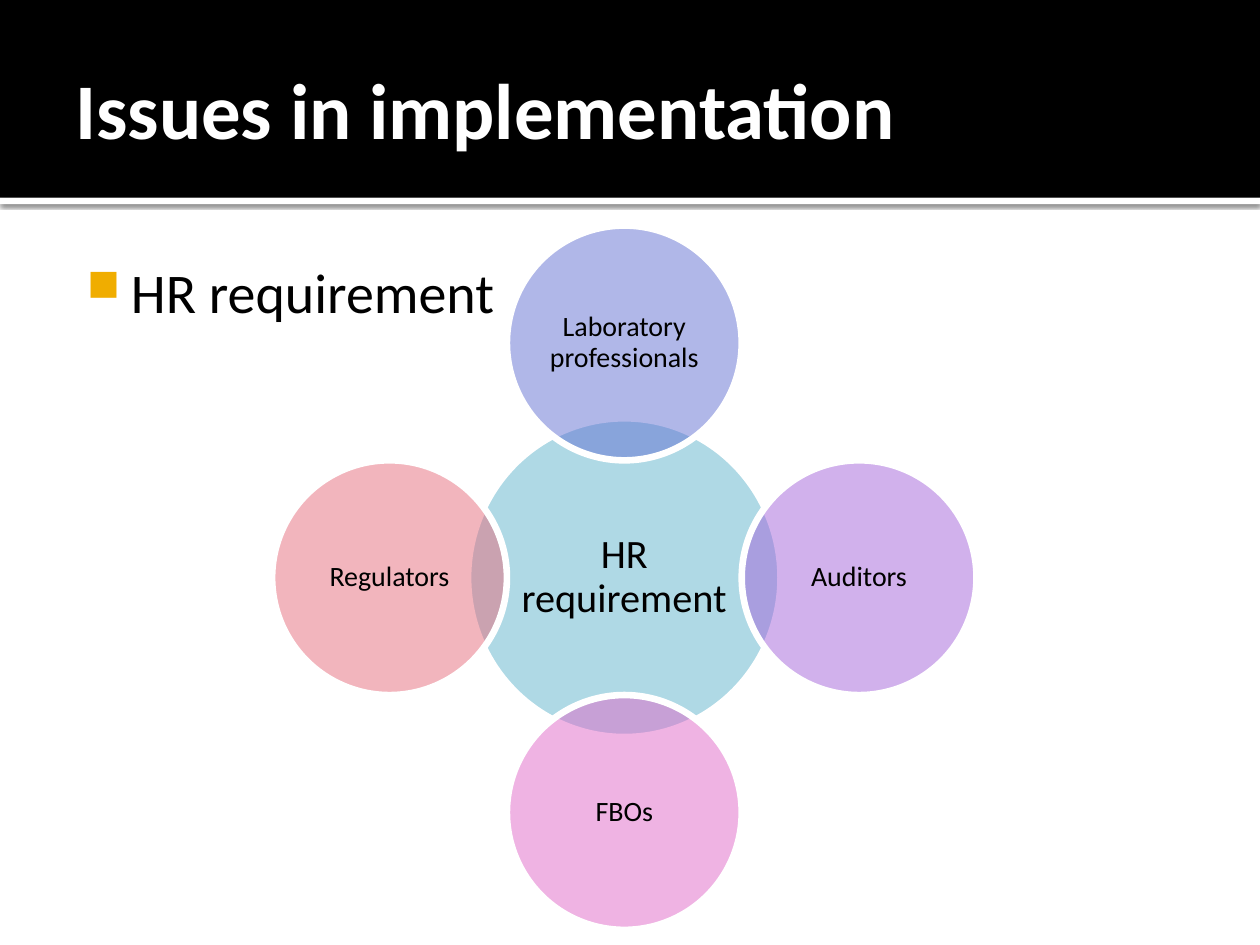
import math

import pptx
import pptx.dml.color
import pptx.enum.shapes
import pptx.enum.text
import pptx.oxml
import pptx.oxml.ns
import pptx.util
from pptx.dml.color import RGBColor
from pptx.util import Inches

BLACK = RGBColor(0x00, 0x00, 0x00)
WHITE = RGBColor(0xFF, 0xFF, 0xFF)
AMBER = RGBColor(0xF0, 0xAD, 0x00)
TEAL = RGBColor(0x60, 0xB5, 0xCC)
BLUE = RGBColor(0x62, 0x70, 0xD3)
PURPLE = RGBColor(0xA4, 0x65, 0xDA)
PINK = RGBColor(0xE0, 0x68, 0xC8)
RED = RGBColor(0xE6, 0x6C, 0x7D)

FONT = "Calibri"
SHAPES = pptx.enum.shapes.MSO_SHAPE
ANCHOR = pptx.enum.text.MSO_ANCHOR
ALIGN = pptx.enum.text.PP_ALIGN

# Satellite circles, clockwise from the top
SATELLITES = [
    ("Laboratory professionals", BLUE),
    ("Auditors", PURPLE),
    ("FBOs", PINK),
    ("Regulators", RED),
]


def add_xml(parent, xml):
    namespaces = pptx.oxml.ns.nsdecls("a")
    tag, rest = xml.split(" ", 1)
    parent.append(pptx.oxml.parse_xml(f"{tag} {namespaces} {rest}"))


def set_text(shape, text, size, color, anchor, margins, bold=False):
    frame = shape.text_frame
    frame.word_wrap = True
    frame.vertical_anchor = anchor
    (frame.margin_left, frame.margin_top,
     frame.margin_right, frame.margin_bottom) = map(Inches, margins)
    paragraph = frame.paragraphs[0]
    paragraph.text = text
    paragraph.font.name = FONT
    paragraph.font.size = pptx.util.Pt(size)
    paragraph.font.bold = bold
    paragraph.font.color.rgb = color
    return paragraph


def add_band(slide, left, top, width, height, color):
    band = slide.shapes.add_shape(
        SHAPES.RECTANGLE, Inches(left), Inches(top), Inches(width), Inches(height))
    band.shadow.inherit = False
    band.fill.solid()
    band.fill.fore_color.rgb = color
    band.line.fill.background()
    return band


def add_header(slide, left, top, width, height):
    # White rule with a soft shadow below the black band
    rule = add_band(slide, left, top + height, width, 0.05, WHITE)
    effects = rule._element.spPr.find(pptx.oxml.ns.qn("a:effectLst"))
    add_xml(effects, '<a:outerShdw blurRad="31750" dist="10160" dir="5400000" '
                     'algn="tl" rotWithShape="0"><a:srgbClr val="000000">'
                     '<a:alpha val="60000"/></a:srgbClr></a:outerShdw>')
    add_band(slide, left, top, width, height, BLACK)

    # Title
    title = slide.shapes.add_textbox(
        Inches(left + 0.5), Inches(top + 0.17), Inches(width - 1), Inches(1.37))
    set_text(title, "Issues in implementation", 45, WHITE, ANCHOR.MIDDLE,
             (0.1, 0.05, 0.05, 0.05), bold=True)


def add_body(slide, left, top, width, height):
    body = slide.shapes.add_textbox(
        Inches(left), Inches(top), Inches(width), Inches(height))
    paragraph = set_text(body, "HR requirement", 32, BLACK, ANCHOR.TOP,
                         (0.06, 0.1, 0.1, 0.05))
    paragraph.space_after = pptx.util.Pt(18)

    # Hanging square bullet, placed before the default run properties
    properties = paragraph._p.get_or_add_pPr()
    properties.set("marL", str(Inches(0.48)))
    properties.set("indent", str(Inches(-0.35)))
    defaults = properties.find(pptx.oxml.ns.qn("a:defRPr"))
    add_xml(properties, f'<a:buClr ><a:srgbClr val="{AMBER}"/></a:buClr>')
    add_xml(properties, '<a:buSzPct val="80000"/>')
    add_xml(properties, '<a:buChar char="■"/>')
    if defaults is not None:
        properties.append(defaults)


def add_circle(slide, center_x, center_y, width, height, text, size, color):
    circle = slide.shapes.add_shape(
        SHAPES.OVAL, Inches(center_x - width / 2), Inches(center_y - height / 2),
        Inches(width), Inches(height))
    circle.shadow.inherit = False
    circle.fill.solid()
    circle.fill.fore_color.rgb = color
    color_element = circle._element.spPr.find(".//" + pptx.oxml.ns.qn("a:srgbClr"))
    add_xml(color_element, '<a:alpha val="50000"/>')
    circle.line.color.rgb = WHITE
    circle.line.width = pptx.util.Pt(3.78)
    paragraph = set_text(circle, text, size, BLACK, ANCHOR.MIDDLE, (0.02,) * 4)
    paragraph.alignment = ALIGN.CENTER
    paragraph.line_spacing = 0.9


def add_radial_diagram(slide, left, top, side):
    center_x, center_y = left + side / 2, top + side / 2
    diameter = side / 3
    orbit = (side - diameter) / 2
    add_circle(slide, center_x, center_y, 2.48, 2.53, "HR requirement", 23, TEAL)
    for index, (text, color) in enumerate(SATELLITES):
        angle = 2 * math.pi * index / len(SATELLITES)
        add_circle(slide, center_x + orbit * math.sin(angle),
                   center_y - orbit * math.cos(angle),
                   diameter, diameter, text, 16, color)


def main():
    presentation = pptx.Presentation()
    presentation.slide_width = Inches(10)
    presentation.slide_height = Inches(7.5)
    slide = presentation.slides.add_slide(presentation.slide_layouts[6])
    add_header(slide, 0, 0, 10, 1.57)
    add_body(slide, 0.5, 1.94, 9, 5.06)
    add_radial_diagram(slide, 2.16, 1.79, 5.59)
    presentation.save("out.pptx")


if __name__ == "__main__":
    main()
